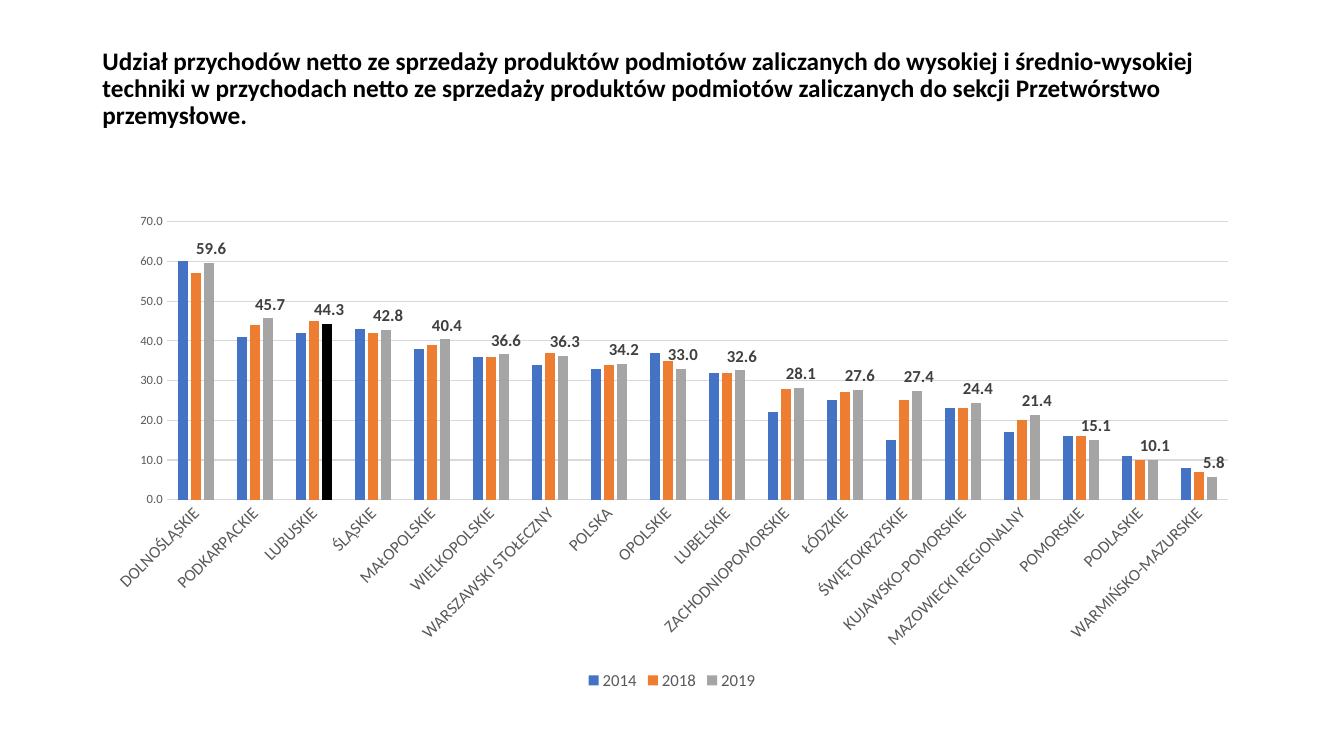
"""Build a slide comparing high-tech sales shares across Polish regions."""
from dataclasses import dataclass

from pptx import Presentation
from pptx.chart.data import CategoryChartData
from pptx.dml.color import RGBColor
from pptx.enum.chart import XL_CHART_TYPE as ChartType
from pptx.enum.chart import XL_LABEL_POSITION as LabelPosition
from pptx.enum.chart import XL_LEGEND_POSITION as LegendPosition
from pptx.enum.chart import XL_TICK_MARK as TickMark
from pptx.enum.text import MSO_ANCHOR, MSO_AUTO_SIZE, PP_ALIGN
from pptx.oxml.ns import qn
from pptx.util import Inches, Pt

HEADING = (
    "Udział przychodów netto ze sprzedaży produktów podmiotów zaliczanych "
    "do wysokiej i średnio-wysokiej techniki w przychodach netto ze sprzedaży "
    "produktów podmiotów zaliczanych do sekcji Przetwórstwo przemysłowe."
)
YEARS = ("2014", "2018", "2019")
REGIONS = [
    ("DOLNOŚLĄSKIE", 60, 57, 59.6),
    ("PODKARPACKIE", 41, 44, 45.7),
    ("LUBUSKIE", 42, 45, 44.3),
    ("ŚLĄSKIE", 43, 42, 42.8),
    ("MAŁOPOLSKIE", 38, 39, 40.4),
    ("WIELKOPOLSKIE", 36, 36, 36.6),
    ("WARSZAWSKI STOŁECZNY", 34, 37, 36.3),
    ("POLSKA", 33, 34, 34.2),
    ("OPOLSKIE", 37, 35, 33),
    ("LUBELSKIE", 32, 32, 32.6),
    ("ZACHODNIOPOMORSKIE", 22, 28, 28.1),
    ("ŁÓDZKIE", 25, 27, 27.6),
    ("ŚWIĘTOKRZYSKIE", 15, 25, 27.4),
    ("KUJAWSKO-POMORSKIE", 23, 23, 24.4),
    ("MAZOWIECKI REGIONALNY", 17, 20, 21.4),
    ("POMORSKIE", 16, 16, 15.1),
    ("PODLASKIE", 11, 10, 10.1),
    ("WARMIŃSKO-MAZURSKIE", 8, 7, 5.8),
]
HIGHLIGHT = ("LUBUSKIE", "2019")
LABELLED_YEAR = "2019"
NUMBER_FORMAT = "#\\ ##0.0"


@dataclass(frozen=True)
class Theme:
    font: str = "Calibri"
    ink: str = "000000"
    muted: str = "595959"
    label: str = "404040"
    grid: str = "D9D9D9"
    bars: tuple = ("4472C4", "ED7D31", "A5A5A5")
    heading_size: int = 18
    base_size: int = 10
    text_size: int = 12
    scale_size: int = 9
    hairline: float = 0.75


THEME = Theme()
WIDTH, HEIGHT = Inches(40) // 3, Inches(7.5)
CONTENT_WIDTH = Inches(11.5)
MARGIN = (WIDTH - CONTENT_WIDTH) // 2
HEADING_BAND = (Inches(0.32), Inches(1.02))
CHART_BAND = (Inches(2.03), Inches(4.86))


def style_font(font, size, color, bold=False):
    font.name = THEME.font
    font.size = Pt(size)
    font.bold = bold
    font.color.rgb = RGBColor.from_string(color)


def fill_solid(part, color):
    part.format.fill.solid()
    part.format.fill.fore_color.rgb = RGBColor.from_string(color)


def style_hairline(line):
    line.color.rgb = RGBColor.from_string(THEME.grid)
    line.width = Pt(THEME.hairline)


def place_heading(slide):
    heading = slide.shapes.title
    heading.left, heading.width = MARGIN, CONTENT_WIDTH
    heading.top, heading.height = HEADING_BAND
    frame = heading.text_frame
    frame.word_wrap = True
    frame.auto_size = MSO_AUTO_SIZE.NONE
    frame.vertical_anchor = MSO_ANCHOR.BOTTOM
    paragraph = frame.paragraphs[0]
    paragraph.alignment = PP_ALIGN.LEFT
    paragraph.line_spacing = 0.9
    run = paragraph.add_run()
    run.text = HEADING
    style_font(run.font, THEME.heading_size, THEME.ink, bold=True)


def style_axes(chart):
    regions, scale = chart.category_axis, chart.value_axis
    for axis, size in ((regions, THEME.text_size), (scale, THEME.scale_size)):
        axis.major_tick_mark = axis.minor_tick_mark = TickMark.NONE
        style_font(axis.tick_labels.font, size, THEME.muted)
    style_hairline(regions.format.line)
    slant = regions.tick_labels.font._element.getparent().getparent().getparent()
    slant.find(qn("a:bodyPr")).set("rot", "-2700000")

    scale.minimum_scale, scale.maximum_scale, scale.major_unit = 0, 70, 10
    scale.format.line.fill.background()
    scale.has_major_gridlines = True
    style_hairline(scale.major_gridlines.format.line)
    scale.tick_labels.number_format = NUMBER_FORMAT
    scale.tick_labels.number_format_is_linked = False


def style_bars(plot):
    plot.gap_width, plot.overlap = 219, -27
    plot.vary_by_categories = False
    for year, color in zip(plot.series, THEME.bars):
        fill_solid(year, color)
        year.invert_if_negative = False
        if year.name == LABELLED_YEAR:
            labels = year.data_labels
            labels.show_value = True
            labels.position = LabelPosition.OUTSIDE_END
            labels.number_format = NUMBER_FORMAT
            labels.number_format_is_linked = False
            style_font(labels.font, THEME.text_size, THEME.label, bold=True)
        if year.name == HIGHLIGHT[1]:
            names = [region[0] for region in REGIONS]
            fill_solid(year.points[names.index(HIGHLIGHT[0])], THEME.ink)


def add_shares_chart(slide):
    names, *shares = zip(*REGIONS)
    chart_data = CategoryChartData(number_format=NUMBER_FORMAT)
    chart_data.categories = names
    for year, values in zip(YEARS, shares):
        chart_data.add_series(year, values)
    top, height = CHART_BAND
    chart = slide.shapes.add_chart(
        ChartType.COLUMN_CLUSTERED, MARGIN, top, CONTENT_WIDTH, height, chart_data
    ).chart
    chart.has_title = False
    style_font(chart.font, THEME.base_size, THEME.ink)
    style_axes(chart)
    style_bars(chart.plots[0])
    chart.has_legend = True
    chart.legend.position = LegendPosition.BOTTOM
    chart.legend.include_in_layout = False
    style_font(chart.legend.font, THEME.text_size, THEME.muted)


def main():
    deck = Presentation()
    deck.slide_width, deck.slide_height = WIDTH, HEIGHT
    slide = deck.slides.add_slide(deck.slide_layouts[5])
    place_heading(slide)
    add_shares_chart(slide)
    deck.save("out.pptx")


if __name__ == "__main__":
    main()
